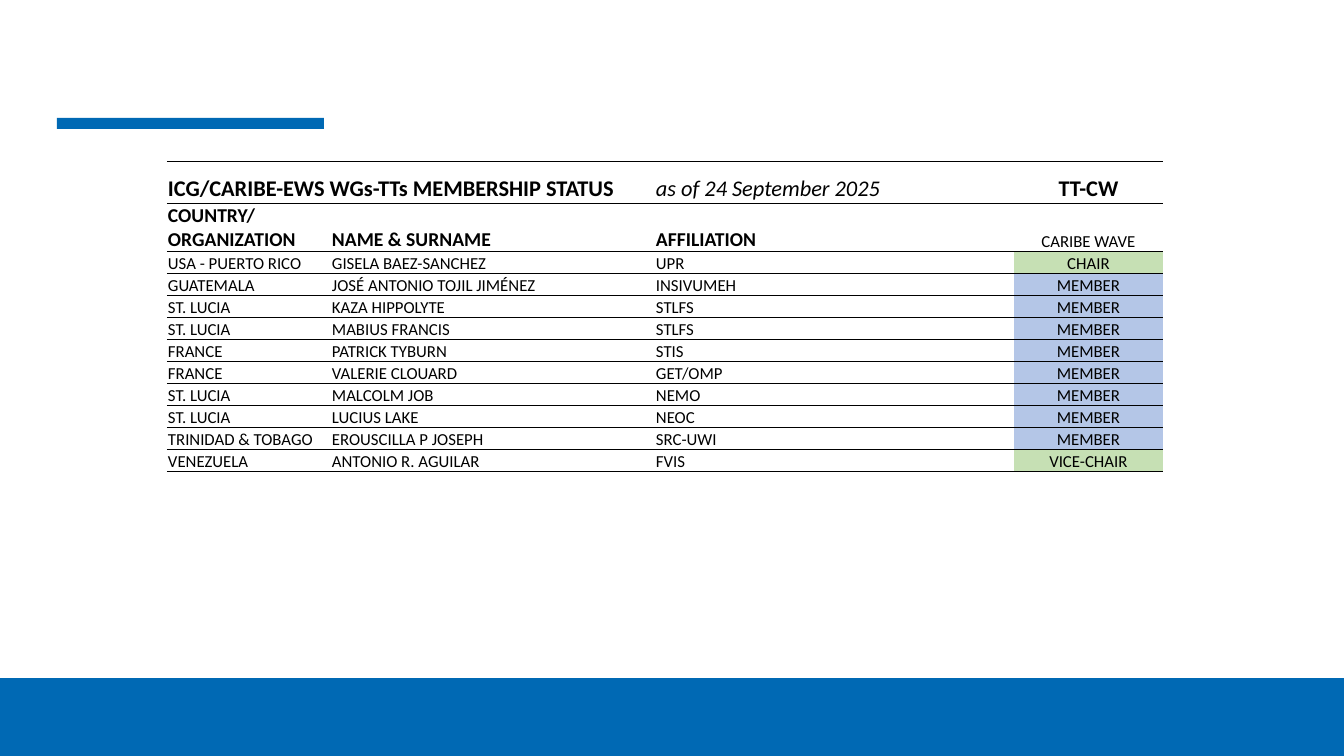
"""Build the task team membership slide."""
from lxml import etree
from pptx import Presentation
from pptx import util as u
from pptx.dml import color
from pptx.enum import shapes, text
from pptx.oxml import ns

PX = 914400 / 100.8
HEX = {"blue": "0069B4", "black": "000000", "lead": "C6E0B4", "member": "B4C6E7"}
BARE = "{2D5ABB26-0587-4C30-8999-92F81FD0307C}"


def px(n):
    return u.Emu(round(n * PX))


def rgb(name):
    return color.RGBColor.from_string(HEX[name])


deck = Presentation()
deck.slide_width, deck.slide_height = px(1344), px(756)
slide = deck.slides.add_slide(deck.slide_layouts[6])

for box in [(57, 118, 267, 11), (0, 678, 1344, 78)]:
    bar = slide.shapes.add_shape(shapes.MSO_SHAPE.RECTANGLE, *map(px, box))
    bar.shadow.inherit = False
    bar.fill.solid()
    bar.fill.fore_color.rgb = rgb("blue")
    bar.line.fill.background()

rows = [
    ("ICG/CARIBE-EWS WGs-TTs MEMBERSHIP STATUS", "", "as of 24 September 2025", "TT-CW"),
    ("COUNTRY/ORGANIZATION", "NAME & SURNAME", "AFFILIATION", "CARIBE WAVE"),
    ("USA - PUERTO RICO", "GISELA BAEZ-SANCHEZ", "UPR", "CHAIR"),
    ("GUATEMALA", "JOSÉ ANTONIO TOJIL JIMÉNEZ", "INSIVUMEH", "MEMBER"),
    ("ST. LUCIA", "KAZA HIPPOLYTE", "STLFS", "MEMBER"),
    ("ST. LUCIA", "MABIUS FRANCIS", "STLFS", "MEMBER"),
    ("FRANCE", "PATRICK TYBURN", "STIS", "MEMBER"),
    ("FRANCE", "VALERIE CLOUARD", "GET/OMP", "MEMBER"),
    ("ST. LUCIA", "MALCOLM JOB", "NEMO", "MEMBER"),
    ("ST. LUCIA", "LUCIUS LAKE", "NEOC", "MEMBER"),
    ("TRINIDAD & TOBAGO", "EROUSCILLA P JOSEPH", "SRC-UWI", "MEMBER"),
    ("VENEZUELA", "ANTONIO R. AGUILAR", "FVIS", "VICE-CHAIR"),
]
wide = [164, 324, 359, 149]
high = [42, 47] + [22] * (len(rows) - 2)
fills = {"CHAIR": "lead", "VICE-CHAIR": "lead", "MEMBER": "member"}

frame = slide.shapes.add_table(len(rows), len(wide), px(167), px(161), px(sum(wide)), px(sum(high)))
table = frame.table
table.first_row = table.horz_banding = False
table._tbl.tblPr[0].text = BARE
for col, w in zip(table.columns, wide):
    col.width = px(w)
for row, h in zip(table.rows, high):
    row.height = px(h)
table.cell(0, 0).merge(table.cell(0, 1))

for r, row in enumerate(rows):
    for c, word in enumerate(row):
        cell = table.cell(r, c)
        cell.margin_left = cell.margin_right = cell.margin_top = px(1)
        cell.margin_bottom = 0
        cell.vertical_anchor = text.MSO_ANCHOR.BOTTOM
        if word in fills:
            cell.fill.solid()
            cell.fill.fore_color.rgb = rgb(fills[word])
        else:
            cell.fill.background()
        props = cell._tc.get_or_add_tcPr()
        for i, side in enumerate(["lnT", "lnB"]):
            edge = etree.Element(ns.qn("a:" + side), w=str(u.Pt(0.5)))
            solid = etree.SubElement(edge, ns.qn("a:solidFill"))
            etree.SubElement(solid, ns.qn("a:srgbClr"), val=HEX["black"])
            props.insert(i, edge)
        if not word:
            continue
        para = cell.text_frame.paragraphs[0]
        last = c == len(wide) - 1
        para.alignment = text.PP_ALIGN.CENTER if last else text.PP_ALIGN.LEFT
        run = para.add_run()
        run.text = word
        font = run.font
        font.name = "Calibri"
        font.size = u.Pt(16 if r == 0 else 14 if r == 1 and not last else 12)
        font.italic = r == 0 and c == 2
        font.bold = font.size > u.Pt(12) and not font.italic
        font.color.rgb = rgb("black")

deck.save("out.pptx")
